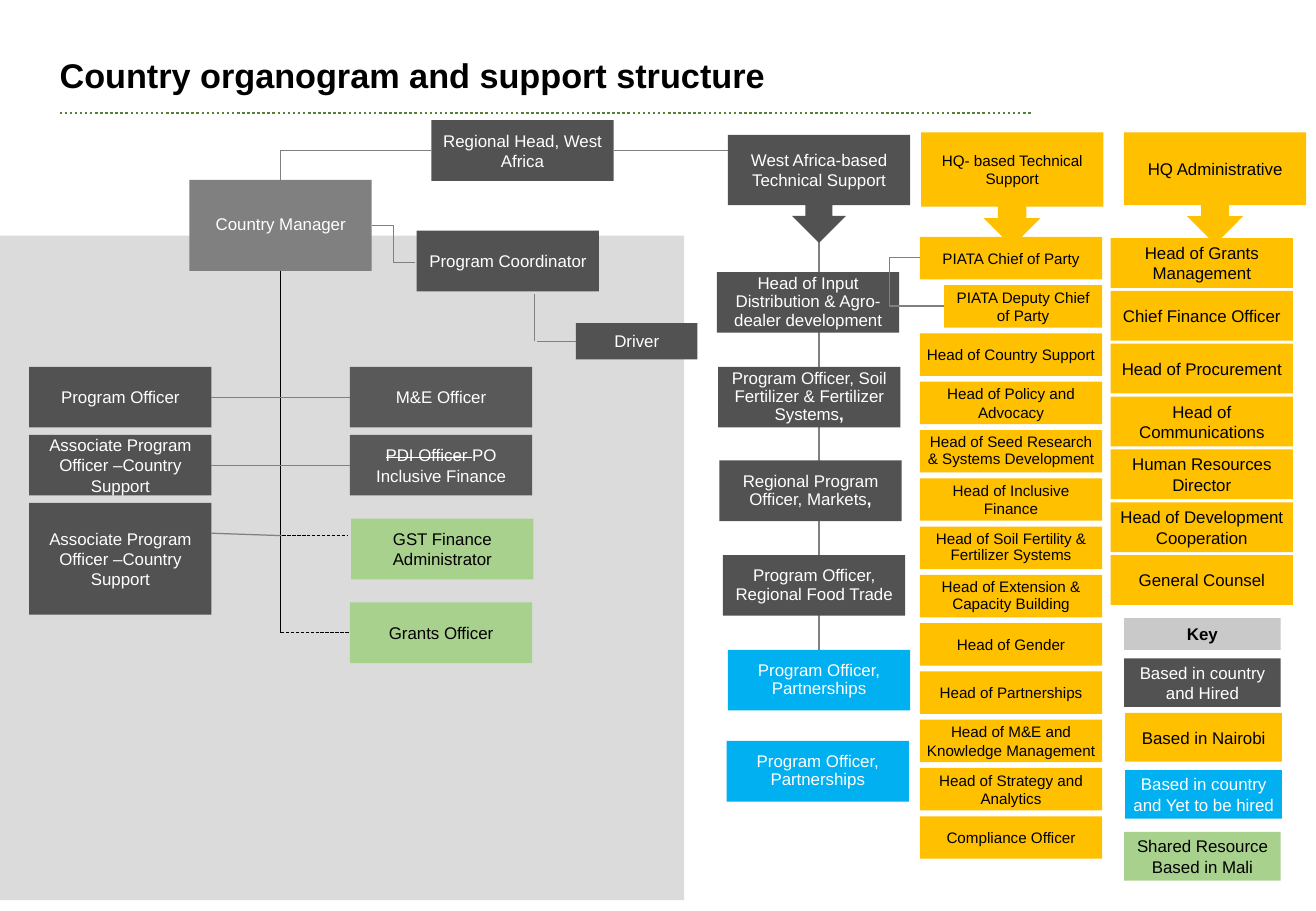
import pptx
import pptx.dml.color
import pptx.enum.dml
import pptx.enum.shapes
import pptx.enum.text
import pptx.oxml.ns
import pptx.util
from lxml import etree

PX = 9144  # 100 px to the inch
RECT = pptx.enum.shapes.MSO_SHAPE.RECTANGLE
CALLOUT = pptx.enum.shapes.MSO_SHAPE.DOWN_ARROW_CALLOUT
STRAIGHT = pptx.enum.shapes.MSO_CONNECTOR.STRAIGHT
ELBOW = pptx.enum.shapes.MSO_CONNECTOR.ELBOW
CENTER = pptx.enum.text.PP_ALIGN.CENTER
DASH = pptx.enum.dml.MSO_LINE


class Theme:
    font = "Arial"
    title, body, small = 20.3, 10, 9
    black, white = "000000", "FFFFFF"
    panel, key = "DBDBDB", "C9C9C9"
    manager, hired, officer = "808080", "525252", "595959"
    nairobi, vacant, shared = "FFC000", "00B0F0", "A9D18E"
    line, rule = "808080", "548135"
    light_text = (manager, hired, officer, vacant)


def rgb(value):
    return pptx.dml.color.RGBColor.from_string(value)


def write(shape, text, size=Theme.body, color=Theme.black, bold=False, align=CENTER,
          anchor=pptx.enum.text.MSO_ANCHOR.MIDDLE, spacing=1.0, inset=(10, 5),
          struck="", bold_end=""):
    """Fill a shape with one paragraph: struck-out start, text, bold end."""
    frame = shape.text_frame
    frame.word_wrap = True
    frame.auto_size = pptx.enum.text.MSO_AUTO_SIZE.NONE
    frame.vertical_anchor = anchor
    frame.margin_left = frame.margin_right = inset[0] * PX
    frame.margin_top = frame.margin_bottom = inset[1] * PX
    paragraph = frame.paragraphs[0]
    paragraph.alignment = align
    paragraph.line_spacing = spacing
    paragraph.space_before = pptx.util.Pt(0)
    for piece, heavy in ((struck, bold), (text, bold), (bold_end, True)):
        if not piece:
            continue
        run = paragraph.add_run()
        run.text = piece
        run.font.name = Theme.font
        run.font.size = pptx.util.Pt(size)
        run.font.bold = heavy
        run.font.color.rgb = rgb(color)
        if piece == struck:
            run._r.get_or_add_rPr().set("strike", "sngStrike")


def add_block(slide, origin, at, fill, text="", kind=RECT, **fmt):
    """Place a filled shape at (x, y, width, height) from the region's origin."""
    x, y, width, height = at
    block = slide.shapes.add_shape(kind, round((origin[0] + x) * PX), round((origin[1] + y) * PX),
                                   width * PX, height * PX)
    block.shadow.inherit = False
    block.fill.solid()
    block.fill.fore_color.rgb = rgb(fill)
    block.line.fill.background()
    if text:
        color = Theme.white if fill in Theme.light_text else Theme.black
        write(block, text, color=color, **fmt)


def link(slide, origin, start, end, color=Theme.line, width=0.75, kind=STRAIGHT,
         dash=None, preset=None, bend=None):
    ends = [(origin[i % 2] + value) * PX for i, value in enumerate(start + end)]
    line = slide.shapes.add_connector(kind, *ends)
    line.line.color.rgb = rgb(color)
    line.line.width = pptx.util.Pt(width)
    if dash:
        line.line.dash_style = dash
    properties = line._element.spPr
    etree.SubElement(properties, pptx.oxml.ns.qn("a:effectLst"))
    geometry = properties.find(pptx.oxml.ns.qn("a:prstGeom"))
    if preset:
        geometry.set("prst", preset)
    if bend:
        guides = geometry.find(pptx.oxml.ns.qn("a:avLst"))
        etree.SubElement(guides, pptx.oxml.ns.qn("a:gd"), name="adj1", fmla=f"val {bend}")


def add_heading(slide, origin):
    title = slide.shapes.title
    title.left, title.top = origin[0] * PX, origin[1] * PX
    title.width, title.height = 792 * PX, 64 * PX
    write(title, "Country organogram and support structure", size=Theme.title, bold=True,
          align=pptx.enum.text.PP_ALIGN.LEFT, anchor=pptx.enum.text.MSO_ANCHOR.BOTTOM,
          spacing=0.9, inset=(0, 0))
    link(slide, origin, (0, 78), (800, 78), Theme.rule, 1.5, dash=DASH.ROUND_DOT)


def add_country_team(slide, origin):
    hired, officer, shared = Theme.hired, Theme.officer, Theme.shared
    tight = {"inset": (5, 5)}
    associate = "Associate Program Officer –Country Support"
    add_block(slide, origin, (0, 95, 563, 547), Theme.panel)
    for at, fill, text, fmt in (
            ((355, 0, 150, 50), hired, "Regional Head, West Africa", tight),
            ((156, 49, 150, 75), Theme.manager, "Country Manager", {"spacing": 0.9}),
            ((343, 91, 150, 50), hired, "Program Coordinator", tight),
            ((474, 167, 100, 30), hired, "Driver", {}),
            ((24, 203, 150, 50), hired, "Program Officer", {}),
            ((24, 259, 150, 50), hired, associate, {}),
            ((24, 315, 150, 92), hired, associate, {}),
            ((288, 203, 150, 50), officer, "M&E Officer", {}),
            ((288, 259, 150, 50), officer, "PO Inclusive Finance", {"struck": "PDI Officer "}),
            ((289, 328, 150, 50), shared, "GST Finance Administrator", {}),
            ((288, 397, 150, 50), shared, "Grants Officer", {})):
        add_block(slide, origin, at, fill, text, **fmt)

    link(slide, origin, (355, 25), (231, 49), kind=ELBOW, preset="bentConnector2")
    link(slide, origin, (342, 117), (306, 87), kind=ELBOW)
    link(slide, origin, (231, 124), (231, 422), Theme.black)
    for start, end in (((440, 182), (440, 143)), ((442, 182), (474, 182)),
                       ((174, 228), (288, 228)), ((174, 284), (288, 284)),
                       ((174, 340), (232, 342))):
        link(slide, origin, start, end)
    for start, end in (((232, 342), (286, 342)), ((231, 422), (288, 422))):
        link(slide, origin, start, end, Theme.black, dash=DASH.SQUARE_DOT)


def add_west_africa_support(slide, origin):
    link(slide, origin, (-85, 25), (84, 436), kind=ELBOW, preset="bentConnector2")
    add_block(slide, origin, (9, 12, 150, 89), Theme.hired,
              "West Africa-based Technical Support", CALLOUT)
    for x, y, fill, text, bold_end in (
            (0, 125, Theme.hired, "Head of Input Distribution & Agro-dealer development", ""),
            (1, 203, Theme.hired, "Program Officer, Soil Fertilizer & Fertilizer Systems", ","),
            (2, 280, Theme.hired, "Regional Program Officer, Markets", ","),
            (5, 358, Theme.hired, "Program Officer, Regional Food Trade", ""),
            (9, 436, Theme.vacant, "Program Officer, Partnerships", ""),
            (8, 511, Theme.vacant, "Program Officer, Partnerships", "")):
        add_block(slide, origin, (x, y, 150, 50), fill, text,
                  spacing=0.9, inset=(5, 5), bold_end=bold_end)


def add_hq_technical_support(slide, origin):
    add_block(slide, origin, (1, 0, 150, 94), Theme.nairobi, "HQ- based Technical Support",
              CALLOUT, size=Theme.small)
    deputy = "PIATA Deputy Chief of Party"
    compact = ("Head of Seed Research & Systems Development",
               "Head of Soil Fertility & Fertilizer Systems",
               "Head of Extension & Capacity Building")
    roles = ("PIATA Chief of Party", deputy, "Head of Country Support",
             "Head of Policy and Advocacy", compact[0], "Head of Inclusive Finance",
             *compact[1:], "Head of Gender", "Head of Partnerships",
             "Head of M&E and Knowledge Management", "Head of Strategy and Analytics",
             "Compliance Officer")
    for row, role in enumerate(roles):
        indent = 20 if role == deputy else 0
        add_block(slide, origin, (indent, 86 + 39.75 * row, 150 - indent, 35), Theme.nairobi, role,
                  size=Theme.small, spacing=0.9 if role in compact else 1.0, inset=(5, 5))
    link(slide, origin, (20, 143), (0, 103), kind=ELBOW, bend=224400)


def add_hq_administrative(slide, origin):
    add_block(slide, origin, (11, 0, 150, 92), Theme.nairobi, "HQ Administrative", CALLOUT)
    roles = ("Head of Grants Management", "Chief Finance Officer", "Head of Procurement",
             "Head of Communications", "Human Resources Director",
             "Head of Development Cooperation", "General Counsel")
    for row, role in enumerate(roles):
        add_block(slide, origin, (0, 87 + 43.5 * row, 150, 41), Theme.nairobi, role, inset=(5, 5))


def add_key(slide, origin):
    add_block(slide, origin, (0, 0, 129, 26), Theme.key, "Key", bold=True, inset=(5, 5))
    for x, y, fill, meaning in (
            (0, 33, Theme.hired, "Based in country and Hired"),
            (1, 78, Theme.nairobi, "Based in Nairobi"),
            (1, 125, Theme.vacant, "Based in country and Yet to be hired"),
            (0, 176, Theme.shared, "Shared Resource Based in Mali")):
        add_block(slide, origin, (x, y, 129, 40), fill, meaning, inset=(5, 5))


def main():
    deck = pptx.Presentation()
    deck.slide_width, deck.slide_height = 1083 * PX, 750 * PX
    slide = deck.slides.add_slide(deck.slide_layouts[5])
    add_heading(slide, (49, 15))
    add_country_team(slide, (0, 99))
    add_west_africa_support(slide, (590, 99))
    add_hq_technical_support(slide, (757, 109))
    add_hq_administrative(slide, (914, 109))
    add_key(slide, (925, 509))
    deck.save("out.pptx")


if __name__ == "__main__":
    main()
